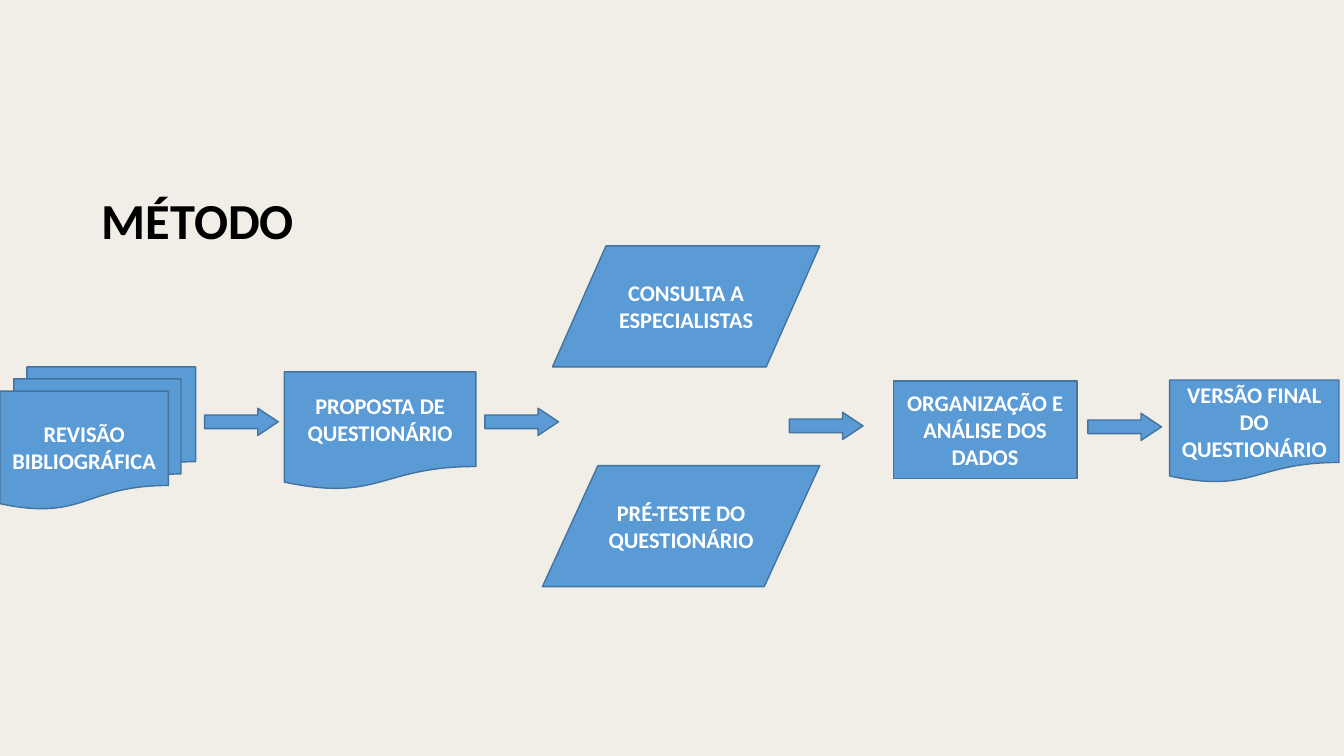
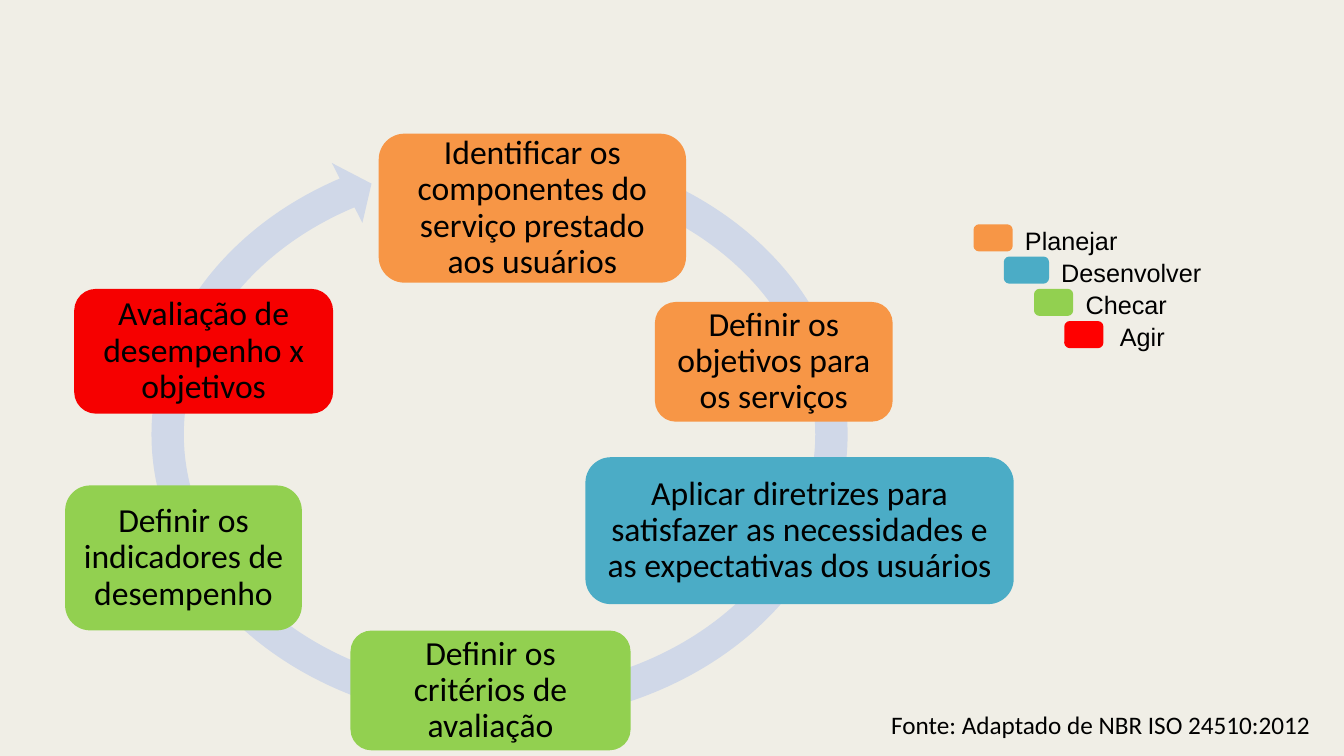
from dataclasses import dataclass
from typing import Optional

from pptx import Presentation
from pptx.dml.color import RGBColor
from pptx.enum.shapes import MSO_SHAPE
from pptx.enum.text import MSO_ANCHOR, MSO_AUTO_SIZE, PP_ALIGN
from pptx.presentation import Presentation as Deck
from pptx.shapes.autoshape import Shape
from pptx.slide import Slide
from pptx.util import Inches, Pt


@dataclass(frozen=True)
class Theme:
    background: RGBColor = RGBColor.from_string("F0EEE6")
    text: RGBColor = RGBColor.from_string("000000")
    white: RGBColor = RGBColor.from_string("FFFFFF")
    flow: RGBColor = RGBColor.from_string("5B9BD5")
    flow_line: RGBColor = RGBColor.from_string("43739E")
    ring: RGBColor = RGBColor.from_string("D0D8E8")
    plan: RGBColor = RGBColor.from_string("F79646")
    do: RGBColor = RGBColor.from_string("4BACC6")
    check: RGBColor = RGBColor.from_string("92D050")
    act: RGBColor = RGBColor.from_string("F60000")
    act_key: RGBColor = RGBColor.from_string("FF0000")
    font: str = "Calibri"
    key_font: str = "Arial"
    title_size: int = 36
    step_size: int = 24
    note_size: int = 18
    flow_size: int = 16


THEME = Theme()


@dataclass(frozen=True)
class Box:
    left: float
    top: float
    width: float
    height: float

    def lengths(self) -> tuple:
        return tuple(Inches(v) for v in (self.left, self.top, self.width, self.height))


@dataclass(frozen=True)
class FlowStep:
    kind: MSO_SHAPE
    box: Box
    text: str


@dataclass(frozen=True)
class CycleStep:
    box: Box
    color: RGBColor
    text: str


@dataclass(frozen=True)
class KeyEntry:
    text: str
    color: RGBColor
    swatch_width: float
    label_left: float
    label_width: float


FLOW_STEPS = (
    FlowStep(MSO_SHAPE.FLOWCHART_MULTIDOCUMENT, Box(0, 3.64, 1.94, 1.41), "REVISÃO BIBLIOGRÁFICA"),
    FlowStep(MSO_SHAPE.FLOWCHART_DOCUMENT, Box(2.82, 3.69, 1.9, 1.17), "PROPOSTA DE QUESTIONÁRIO"),
    FlowStep(MSO_SHAPE.FLOWCHART_DATA, Box(5.48, 2.44, 2.65, 1.2), "CONSULTA A ESPECIALISTAS"),
    FlowStep(MSO_SHAPE.FLOWCHART_DATA, Box(5.38, 4.62, 2.75, 1.2), "PRÉ-TESTE DO QUESTIONÁRIO"),
    FlowStep(MSO_SHAPE.FLOWCHART_PROCESS, Box(8.86, 3.78, 1.82, 0.97), "ORGANIZAÇÃO E ANÁLISE DOS DADOS"),
    FlowStep(MSO_SHAPE.FLOWCHART_DOCUMENT, Box(11.6, 3.77, 1.68, 1.02), "VERSÃO FINAL DO QUESTIONÁRIO"),
)
ARROW_POINTS = ((2.03, 4.05), (4.81, 4.05), (7.83, 4.09), (10.79, 4.1))

RING_BOX = Box(1.33, 1.28, 7.25, 6.06)
RING_ADJUSTMENTS = (0.053, 3.126, 142.646, 171.057, 0.055)
CYCLE_STEPS = (
    CycleStep(Box(3.77, 1.34, 3.02, 1.45), THEME.plan,
              "Identificar os componentes do serviço prestado aos usuários"),
    CycleStep(Box(6.51, 3.01, 2.33, 1.16), THEME.plan, "Definir os objetivos para os serviços"),
    CycleStep(Box(5.82, 4.55, 4.22, 1.43), THEME.do,
              "Aplicar diretrizes para satisfazer as necessidades e as expectativas dos usuários"),
    CycleStep(Box(3.49, 6.27, 2.75, 1.16), THEME.check, "Definir os critérios de avaliação"),
    CycleStep(Box(0.66, 4.83, 2.32, 1.41), THEME.check, "Definir os indicadores de desempenho"),
    CycleStep(Box(0.75, 2.88, 2.54, 1.21), THEME.act, "Avaliação de desempenho x objetivos"),
)
KEY_ENTRIES = (
    KeyEntry("Planejar", THEME.plan, 0.36, 9.91, 1.43),
    KeyEntry("Desenvolver", THEME.do, 0.42, 10.38, 1.68),
    KeyEntry("Checar", THEME.check, 0.36, 10.59, 1.16),
    KeyEntry("Agir", THEME.act_key, 0.36, 10.86, 0.94),
)


def write(sp: Shape, text: str, size: int, color: RGBColor = THEME.text,
          font: str = THEME.font, bold: bool = False,
          align: PP_ALIGN = PP_ALIGN.CENTER, spacing: float = 1.0,
          inset: Optional[float] = None) -> None:
    tf = sp.text_frame
    tf.text = text
    tf.word_wrap = True
    tf.vertical_anchor = MSO_ANCHOR.MIDDLE
    if inset is not None:
        tf.margin_left = tf.margin_right = Inches(inset)
        tf.margin_top = tf.margin_bottom = Inches(inset)
    p = tf.paragraphs[0]
    p.alignment = align
    p.line_spacing = spacing
    r = p.runs[0]
    r.font.name = font
    r.font.size = Pt(size)
    r.font.bold = bold
    r.font.color.rgb = color


def add_filled(s: Slide, kind: MSO_SHAPE, box: Box, fill: RGBColor,
               line: Optional[RGBColor] = None, line_width: float = 1) -> Shape:
    sp = s.shapes.add_shape(kind, *box.lengths())
    sp.shadow.inherit = False
    sp.fill.solid()
    sp.fill.fore_color.rgb = fill
    if line is None:
        sp.line.fill.background()
    else:
        sp.line.color.rgb = line
        sp.line.width = Pt(line_width)
    return sp


def add_title(s: Slide, text: str, box: Box) -> None:
    sp = s.shapes.title
    sp.left, sp.top, sp.width, sp.height = box.lengths()
    write(sp, text, THEME.title_size, bold=True, align=PP_ALIGN.LEFT, spacing=0.9)


def add_rounded(s: Slide, box: Box, color: RGBColor) -> Shape:
    return add_filled(s, MSO_SHAPE.ROUNDED_RECTANGLE, box, color, color, 2)


def add_key(s: Slide) -> None:
    for i, entry in enumerate(KEY_ENTRIES):
        top = 2.24 + 0.32 * i
        add_rounded(s, Box(9.67 + 0.3 * i, top, entry.swatch_width, 0.24), entry.color)
        label = Box(entry.label_left, top - 0.11, entry.label_width, 0.54)
        sp = s.shapes.add_textbox(*label.lengths())
        write(sp, entry.text, THEME.note_size, font=THEME.key_font, spacing=0.9, inset=0.05)


def add_source(s: Slide, text: str) -> None:
    sp = s.shapes.add_textbox(*Box(8.74, 6.99, 4.41, 0.4).lengths())
    write(sp, text, THEME.note_size, align=PP_ALIGN.LEFT)
    tf = sp.text_frame
    tf.word_wrap = False
    tf.vertical_anchor = MSO_ANCHOR.TOP
    tf.auto_size = MSO_AUTO_SIZE.SHAPE_TO_FIT_TEXT


def build_method(prs: Deck) -> None:
    s = prs.slides.add_slide(prs.slide_layouts[5])
    add_title(s, "MÉTODO", Box(0.91, 1.54, 10.4, 1.35))
    for step in FLOW_STEPS:
        sp = add_filled(s, step.kind, step.box, THEME.flow, THEME.flow_line)
        write(sp, step.text, THEME.flow_size, THEME.white, bold=True)
    for left, top in ARROW_POINTS:
        sp = add_filled(s, MSO_SHAPE.RIGHT_ARROW, Box(left, top, 0.73, 0.27),
                        THEME.flow, THEME.flow_line)
        sp.adjustments[1] = 0.75


def build_cycle(prs: Deck) -> None:
    s = prs.slides.add_slide(prs.slide_layouts[6])
    add_source(s, "Fonte: Adaptado de NBR ISO 24510:2012")
    ring = add_filled(s, MSO_SHAPE.CIRCULAR_ARROW, RING_BOX, THEME.ring)
    for i, value in enumerate(RING_ADJUSTMENTS):
        ring.adjustments[i] = value
    for step in CYCLE_STEPS:
        sp = add_rounded(s, step.box, step.color)
        write(sp, step.text, THEME.step_size, spacing=0.9, inset=0.1)
    add_key(s)


def main() -> None:
    prs = Presentation()
    prs.slide_width = Inches(13.33)
    prs.slide_height = Inches(7.5)
    fill = prs.slide_master.background.fill
    fill.solid()
    fill.fore_color.rgb = THEME.background
    build_method(prs)
    build_cycle(prs)
    prs.save("out.pptx")


if __name__ == "__main__":
    main()
